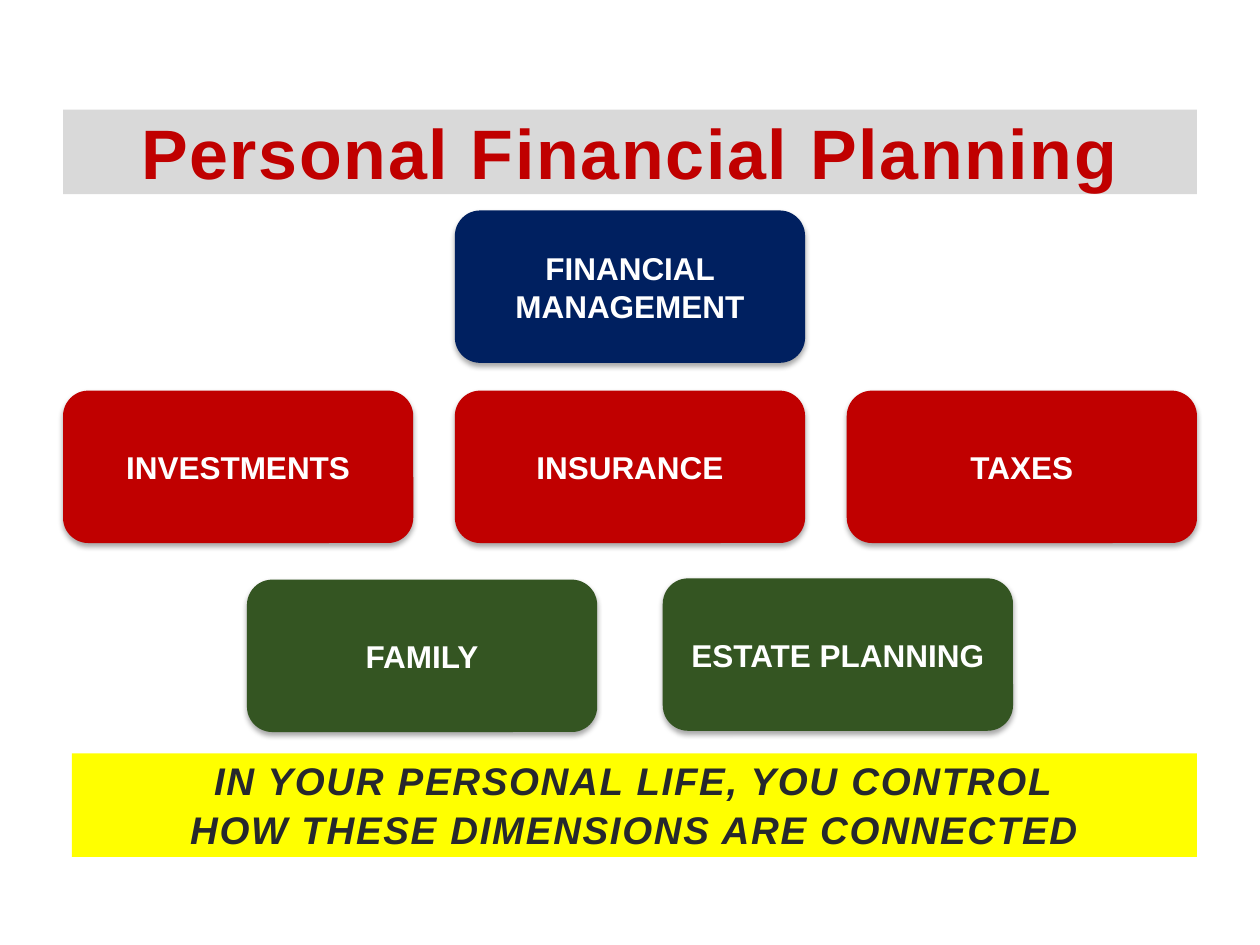
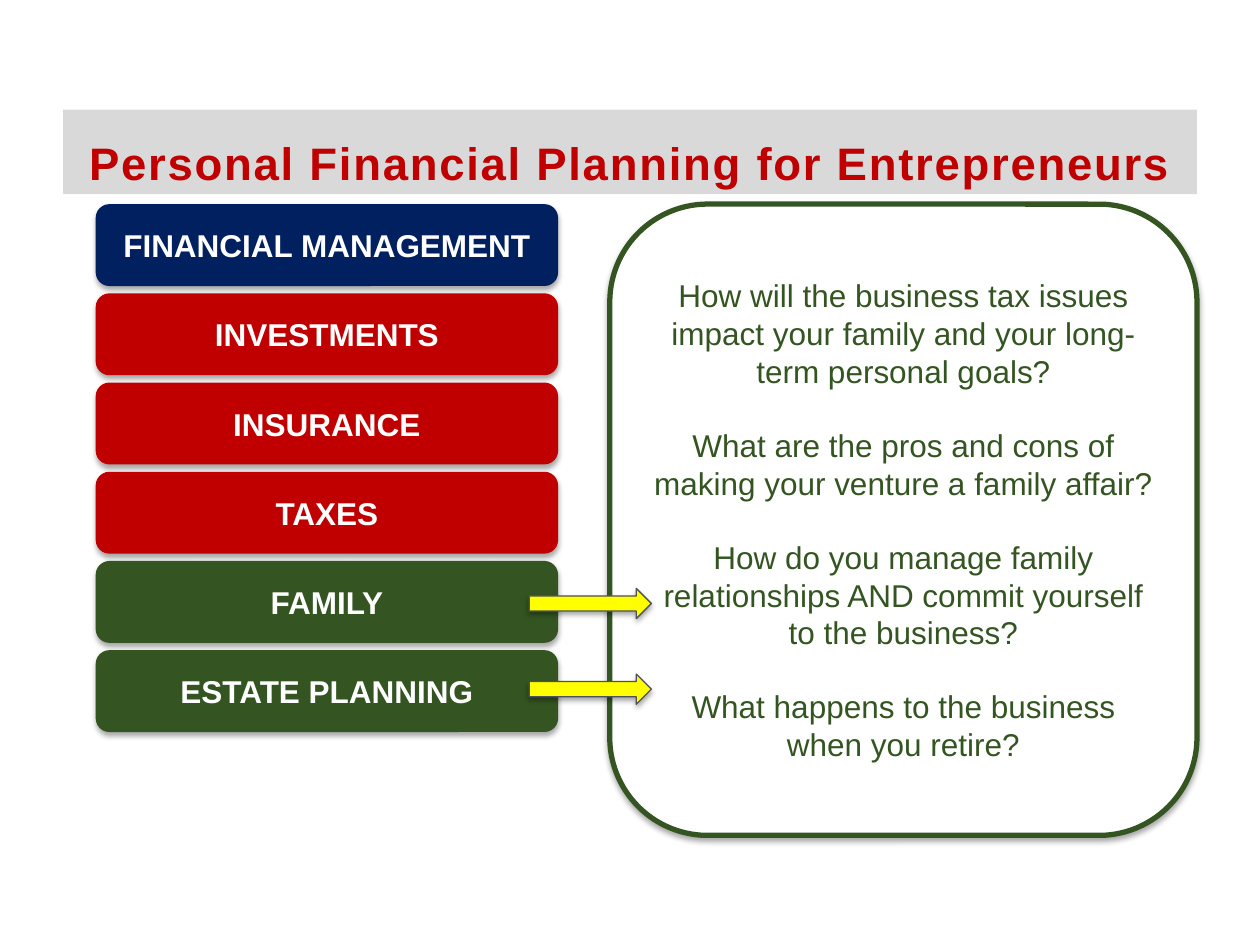
from pptx import Presentation
from pptx.dml.color import RGBColor
from pptx.enum.shapes import MSO_SHAPE as Shape
from pptx.enum.text import MSO_ANCHOR as Anchor, MSO_AUTO_SIZE as AutoSize, PP_ALIGN as Align
from pptx.oxml.ns import qn
from pptx.util import Inches, Pt

COLORS = {
    "navy": "002060", "red": "C00000", "green": "345522", "white": "FFFFFF",
    "yellow": "FFFF00", "band": "D9D9D9", "ink": "26282D", "edge": "4C515A",
}
# Planning dimensions, from top to bottom, with their colours
DIMENSIONS = [
    ("FINANCIAL MANAGEMENT", "navy"),
    ("INVESTMENTS", "red"), ("INSURANCE", "red"), ("TAXES", "red"),
    ("FAMILY", "green"), ("ESTATE PLANNING", "green"),
]


def style_text(paragraph, size, color, bold=False, italic=False, spacing=0):
    paragraph.alignment = Align.CENTER
    font = paragraph.font
    font.name, font.size, font.bold, font.italic = "Arial", Pt(size), bold, italic
    font.color.rgb = RGBColor.from_string(COLORS[color])
    if spacing:
        paragraph._p.pPr.find(qn("a:defRPr")).set("spc", str(spacing * 100))


def add_block(slide, kind, left, top, width, height, fill, line=None, line_width=0):
    block = slide.shapes.add_shape(
        kind, Inches(left), Inches(top), Inches(width), Inches(height))
    block.fill.solid()
    block.fill.fore_color.rgb = RGBColor.from_string(COLORS[fill])
    if line:
        block.line.color.rgb = RGBColor.from_string(COLORS[line])
        block.line.width = Pt(line_width)
    else:
        block.line.fill.background()
    return block


prs = Presentation()
prs.slide_width, prs.slide_height = Inches(10), Inches(7.5)

# Each slide: title on a grey band, then its dimension boxes
box_w, box_h, column_step = 2.78, 1.21, 3.11
columns = [0.5 + column_step * i for i in range(3)]
pyramid = [(columns[1], 1.67)] + [(x, 3.1) for x in columns] + [(1.96, 4.6), (5.26, 4.59)]
bar_step = 3.54 / 5
stack = [(0.76, 1.62 + bar_step * i) for i in range(len(DIMENSIONS))]

slides = []
for heading, size, line_spacing, places, width, height in [
    ("Personal Financial Planning", 40, 1.0, pyramid, box_w, box_h),
    ("Personal Financial Planning for Entrepreneurs", 26, 1.4, stack, 3.67, 0.65),
]:
    slide = prs.slides.add_slide(prs.slide_layouts[5])
    slides.append(slide)
    title = slide.shapes.title
    title.left, title.top = Inches(0.5), Inches(0.87)
    title.width, title.height = Inches(9), Inches(0.67)
    title.fill.solid()
    title.fill.fore_color.rgb = RGBColor.from_string(COLORS["band"])
    frame = title.text_frame
    frame.text = heading
    frame.auto_size = AutoSize.NONE
    frame.vertical_anchor = Anchor.MIDDLE
    frame.margin_left = frame.margin_right = frame.margin_top = frame.margin_bottom = 0
    frame.paragraphs[0].line_spacing = line_spacing
    style_text(frame.paragraphs[0], size, "red", bold=True, spacing=1)

    for (label, color), (left, top) in zip(DIMENSIONS, places):
        dimension = add_block(slide, Shape.ROUNDED_RECTANGLE, left, top, width, height, color)
        dimension.text_frame.text = label
        style_text(dimension.text_frame.paragraphs[0], 18, "white", bold=True)

overview, entrepreneurs = slides

# Overview: closing message
message = add_block(overview, Shape.RECTANGLE, 0.57, 5.98, 8.93, 0.82, "yellow")
message.shadow.inherit = False
frame = message.text_frame
frame.text = "IN YOUR PERSONAL LIFE, YOU CONTROL\vHOW THESE DIMENSIONS ARE CONNECTED"
frame.vertical_anchor = Anchor.TOP
frame.margin_left = frame.margin_right = frame.margin_top = frame.margin_bottom = 0
frame.paragraphs[0].line_spacing = 1.07
style_text(frame.paragraphs[0], 22, "ink", bold=True, italic=True, spacing=1)

# Entrepreneurs: question panel
questions = [
    "How will the business tax issues impact your family and your long-term personal goals?",
    "What are the pros and cons of making your venture a family affair?",
    "How do you manage family relationships AND commit yourself to the business?",
    "What happens to the business when you retire?",
]
panel = add_block(entrepreneurs, Shape.ROUNDED_RECTANGLE,
                  4.84, 1.62, 4.66, 5.01, "white", "green", 3)
panel.text_frame.text = "\n".join(questions)
for i, question in enumerate(panel.text_frame.paragraphs):
    if i:
        question.space_before = Pt(20.7)
    style_text(question, 18, "green")

# Entrepreneurs: arrows from the green bars to the questions
for top in (4.67, 5.35):
    add_block(entrepreneurs, Shape.RIGHT_ARROW, 4.2, top, 0.97, 0.24, "yellow", "edge", 0.75)

prs.save("out.pptx")
